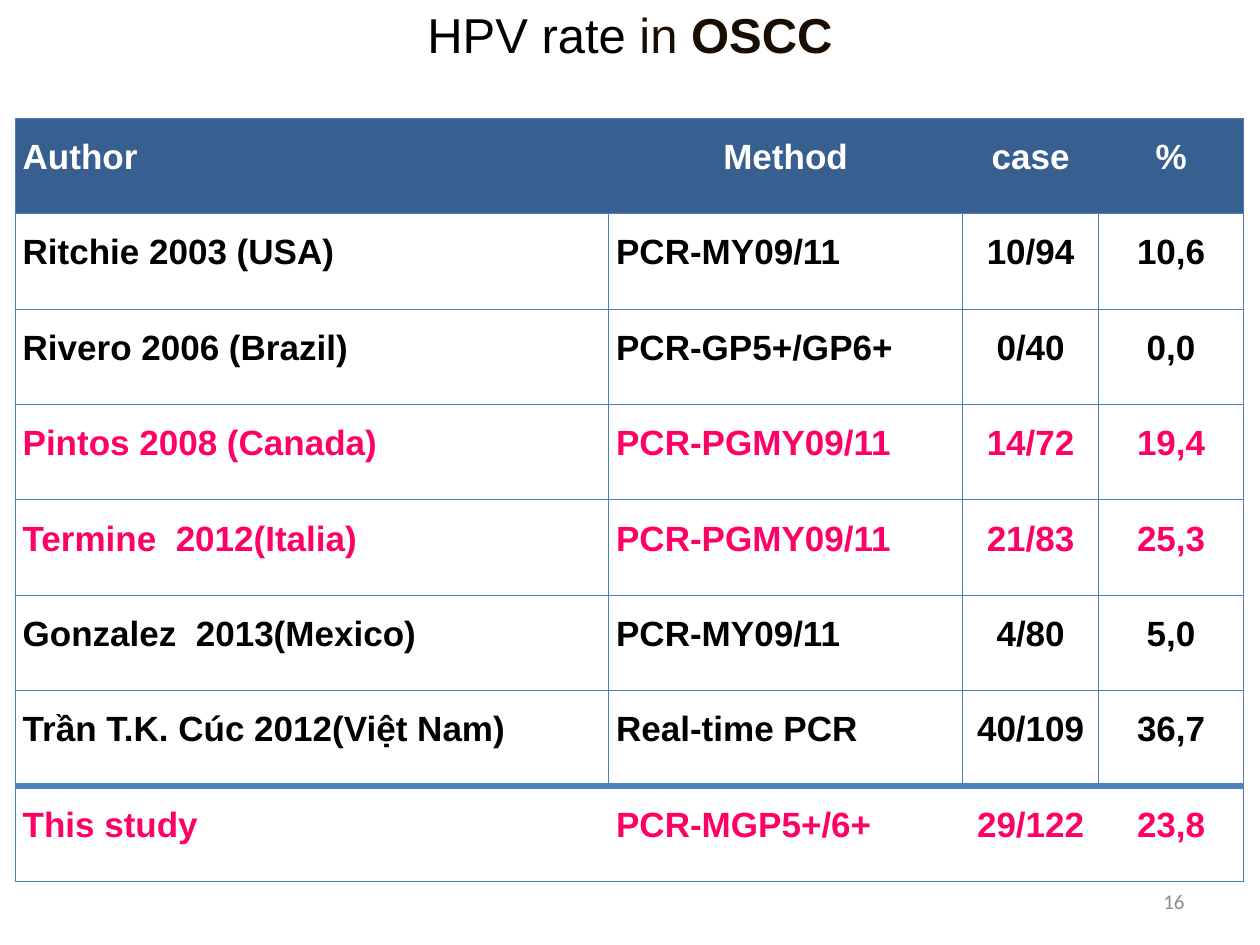
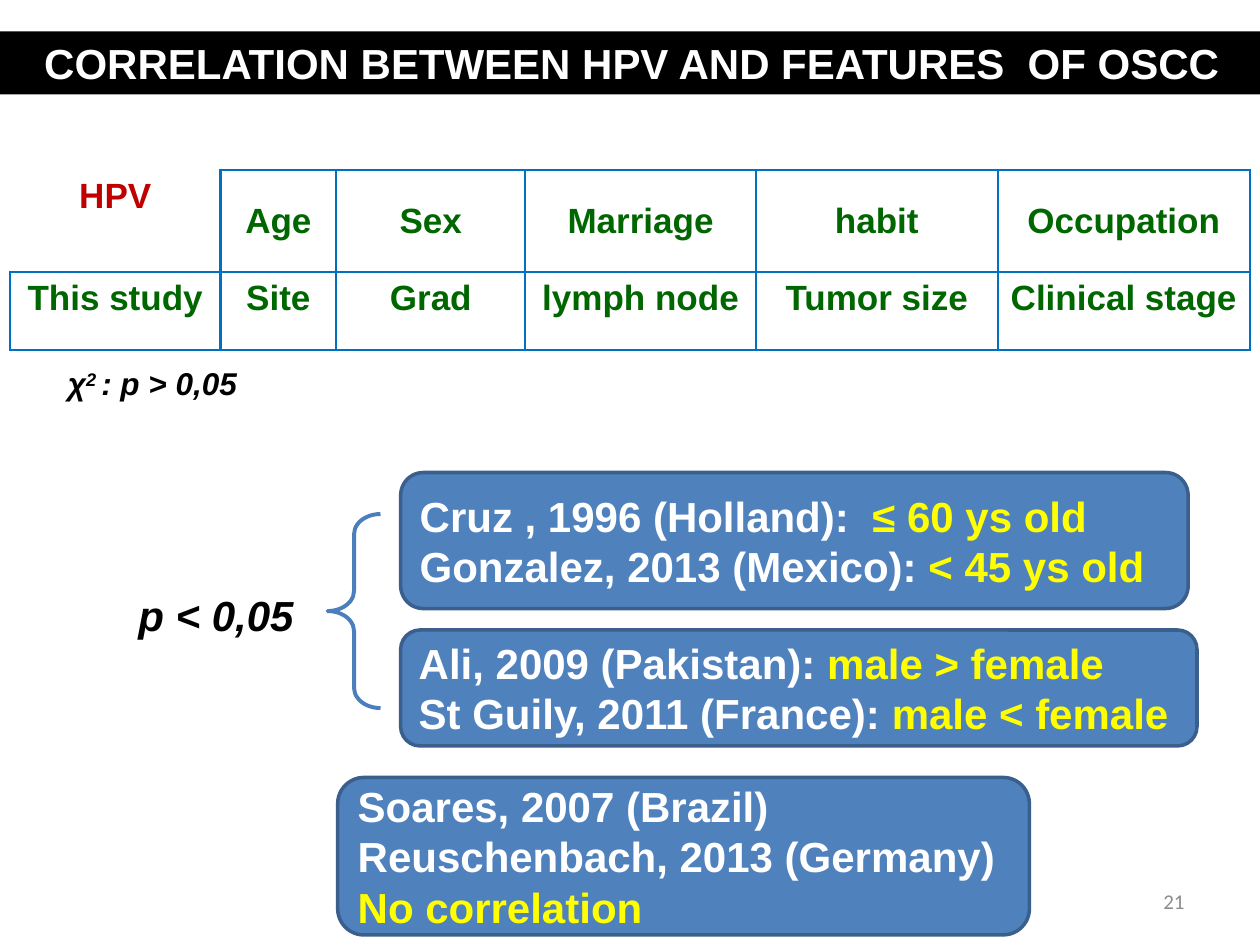
from lxml import etree
from pptx import Presentation
from pptx.dml.color import RGBColor
from pptx.enum.shapes import MSO_SHAPE
from pptx.enum.text import MSO_ANCHOR, PP_ALIGN
from pptx.oxml.ns import qn
from pptx.util import Inches, Pt

LEFT, CENTER, RIGHT = PP_ALIGN.LEFT, PP_ALIGN.CENTER, PP_ALIGN.RIGHT
TOP, MIDDLE = MSO_ANCHOR.TOP, MSO_ANCHOR.MIDDLE
RECT, ROUND = MSO_SHAPE.RECTANGLE, MSO_SHAPE.ROUNDED_RECTANGLE
BRACE = MSO_SHAPE.LEFT_BRACE

WHITE, BLACK, GREY = "FFFFFF", "000000", "8C8C8C"
PINK, YELLOW, RED, GREEN = "FF0066", "FFFF00", "C00000", "006600"
NAVY, BLUE, BLUE_EDGE = "376091", "4F81BD", "3A5F8C"
RULE, GRID_BLUE = "4B7EBC", "0070C0"

RATES = [
    ("Author", "Method", "case", "%"),
    ("Ritchie 2003 (USA)", "PCR-MY09/11", "10/94", "10,6"),
    ("Rivero 2006 (Brazil)", "PCR-GP5+/GP6+", "0/40", "0,0"),
    ("Pintos 2008 (Canada)", "PCR-PGMY09/11", "14/72", "19,4"),
    ("Termine  2012(Italia)", "PCR-PGMY09/11", "21/83", "25,3"),
    ("Gonzalez  2013(Mexico)", "PCR-MY09/11", "4/80", "5,0"),
    ("Trần T.K. Cúc 2012(Việt Nam)", "Real-time PCR", "40/109", "36,7"),
    ("This study", "PCR-MGP5+/6+", "29/122", "23,8"),
]
PINK_ROWS = (3, 4, 7)

FEATURES = [
    ("HPV", "Age", "Sex", "Marriage", "habit", "Occupation"),
    ("This study", "Site", "Grad", "lymph node ", "Tumor size", "Clinical stage"),
]


def rgb(value):
    return RGBColor.from_string(value)


def write(tf, paragraphs, size=24, color=BLACK, bold=False, italic=False,
          font="Arial", align=LEFT, anchor=TOP, spacing=None, wrap=True):
    """Fill a frame; a paragraph is a string or a list of (text, overrides) runs."""
    tf.word_wrap = wrap
    tf.vertical_anchor = anchor
    if isinstance(paragraphs, str):
        paragraphs = [paragraphs]
    for i, runs in enumerate(paragraphs):
        p = tf.paragraphs[0] if i == 0 else tf.add_paragraph()
        p.alignment = align
        if spacing:
            p.line_spacing = spacing
        if isinstance(runs, str):
            runs = [(runs, {})]
        for text, own in runs:
            r = p.add_run()
            r.text = text
            r.font.name = font
            r.font.size = Pt(size)
            r.font.bold = own.get("bold", bold)
            r.font.italic = italic
            r.font.color.rgb = rgb(own.get("color", color))
            if "baseline" in own:
                r._r.get_or_add_rPr().set("baseline", str(own["baseline"]))


def add_text(s, box, paragraphs, **fmt):
    sp = s.shapes.add_textbox(*map(Inches, box))
    write(sp.text_frame, paragraphs, **fmt)


def add_shape(s, kind, box, fill=None, line=None, width=2):
    sp = s.shapes.add_shape(kind, *map(Inches, box))
    sp.shadow.inherit = False
    if fill:
        sp.fill.solid()
        sp.fill.fore_color.rgb = rgb(fill)
    else:
        sp.fill.background()
    if line:
        sp.line.color.rgb = rgb(line)
        sp.line.width = Pt(width)
    else:
        sp.line.fill.background()
    return sp


def title_band(s, box, fill, paragraphs, **fmt):
    sp = add_shape(s, RECT, box, fill)
    write(sp.text_frame, paragraphs, align=CENTER, **fmt)


def page_number(s, number):
    add_text(s, (7.17, 6.95, 2.33, 0.4), number, size=12, color=GREY,
             font="Calibri", align=RIGHT, anchor=MIDDLE)


def set_borders(cell, **edges):
    """Set edges L, R, T, B, each a (colour, points) pair or None."""
    tc_pr = cell._tc.get_or_add_tcPr()
    for i, side in enumerate("LRTB"):
        ln = etree.Element(qn("a:ln" + side))
        if edges[side]:
            color, width = edges[side]
            ln.set("w", str(Pt(width)))
            fill = etree.SubElement(ln, qn("a:solidFill"))
            etree.SubElement(fill, qn("a:srgbClr")).set("val", color)
        else:
            etree.SubElement(ln, qn("a:noFill"))
        tc_pr.insert(i, ln)


def add_table(s, left, top, widths, heights, rows, style_cell):
    """Add a plain grid; style_cell(cell, row, column, text) formats each cell."""
    box = (left, top, sum(widths), sum(heights))
    frame = s.shapes.add_table(len(rows), len(widths), *map(Inches, box))
    table = frame.table
    table.first_row = table.horz_banding = False
    for column, width in zip(table.columns, widths):
        column.width = Inches(width)
    for row, height in zip(table.rows, heights):
        row.height = Inches(height)
    for i, texts in enumerate(rows):
        for j, text in enumerate(texts):
            cell = table.cell(i, j)
            cell.fill.solid()
            cell.fill.fore_color.rgb = rgb(WHITE)
            style_cell(cell, i, j, text)


def style_rate(cell, i, j, text):
    last_row, last_col = len(RATES) - 1, len(RATES[0]) - 1
    header = i == 0
    thin, thick = (RULE, 0.75), (BLUE, 4)
    ruled = 0 < i < last_row
    set_borders(cell,
                L=thin if ruled or j == 0 else None,
                R=thin if ruled or j == last_col else None,
                T=thick if i == last_row else thin,
                B=thick if i == last_row - 1 else thin)
    if header:
        cell.fill.fore_color.rgb = rgb(NAVY)
    cell.margin_left = cell.margin_right = Inches(0.06)
    cell.margin_top = cell.margin_bottom = 0
    centered = j > 1 or (header and j == 1)
    color = WHITE if header else PINK if i in PINK_ROWS else BLACK
    write(cell.text_frame, text, size=20, bold=True, color=color, spacing=1.5,
          align=CENTER if centered else LEFT)


def style_feature(cell, i, j, text):
    corner = i == j == 0
    edge = (GRID_BLUE, 1.5)
    outer = None if corner else edge
    set_borders(cell, L=outer, R=edge, T=outer, B=edge)
    if i == 0 and not corner:
        cell.vertical_anchor = MIDDLE
    write(cell.text_frame, text, size=20, bold=True, align=CENTER,
          color=RED if corner else GREEN,
          anchor=cell.vertical_anchor)


def finding_box(s, box, paragraphs):
    sp = add_shape(s, ROUND, box, BLUE, BLUE_EDGE)
    write(sp.text_frame, paragraphs, color=WHITE, bold=True, anchor=MIDDLE)


def significant_findings(s, left, top):
    add_text(s, (left, top + 0.88, 1.87, 0.5), "p < 0,05", bold=True,
             italic=True, wrap=False)
    brace = add_shape(s, BRACE, (left + 1.6, top + 0.33, 0.42, 1.54),
                      line=RULE, width=2.25)
    brace.adjustments[0] = 0.38
    yellow = {"color": YELLOW}
    finding_box(s, (left + 2.18, top, 6.25, 1.08), [
        [("Cruz , 1996 (Holland):  ", {}), ("≤ 60 ys old", yellow)],
        [("Gonzalez, 2013 (Mexico): ", {}), ("< 45 ys old", yellow)]])
    finding_box(s, (left + 2.18, top + 1.25, 6.32, 0.92), [
        [("Ali, 2009 (Pakistan): ", {}), ("male > female", yellow)],
        [("St Guily, 2011 (France): ", {}), ("male < female", yellow)]])


def rate_slide(s):
    dark = {"color": "190C01"}
    title_band(s, (0, -0.01, 10, 0.57), WHITE,
               [[("HPV rate ", {}), ("in ", dark), ("OSCC", {**dark, "bold": True})]],
               size=28)
    add_table(s, 0.12, 0.94, (4.71, 2.81, 1.08, 1.15),
              [0.757] * len(RATES), RATES, style_rate)
    page_number(s, "16")


def correlation_slide(s):
    title_band(s, (0, 0.25, 10.03, 0.5), BLACK,
               "CORRELATION BETWEEN HPV AND FEATURES  OF OSCC",
               color=WHITE, bold=True)
    add_table(s, 0.08, 1.35, (1.67, 0.92, 1.5, 1.83, 1.92, 2), (0.81, 0.62),
              FEATURES, style_feature)
    add_text(s, (0.44, 2.84, 1.75, 0.4),
             [[("χ", {}), ("2 ", {"baseline": 30000}), (": p > 0,05", {})]],
             size=18, bold=True, italic=True)
    significant_findings(s, 1, 3.75)
    finding_box(s, (2.68, 6.17, 5.49, 1.25), [
        "Soares, 2007 (Brazil)", "Reuschenbach, 2013 (Germany)",
        [("No correlation", {"color": YELLOW})]])
    page_number(s, "21")


def main():
    prs = Presentation()
    prs.slide_width, prs.slide_height = Inches(10), Inches(7.5)
    for build in (rate_slide, correlation_slide):
        build(prs.slides.add_slide(prs.slide_layouts[6]))
    prs.save("out.pptx")


if __name__ == "__main__":
    main()
